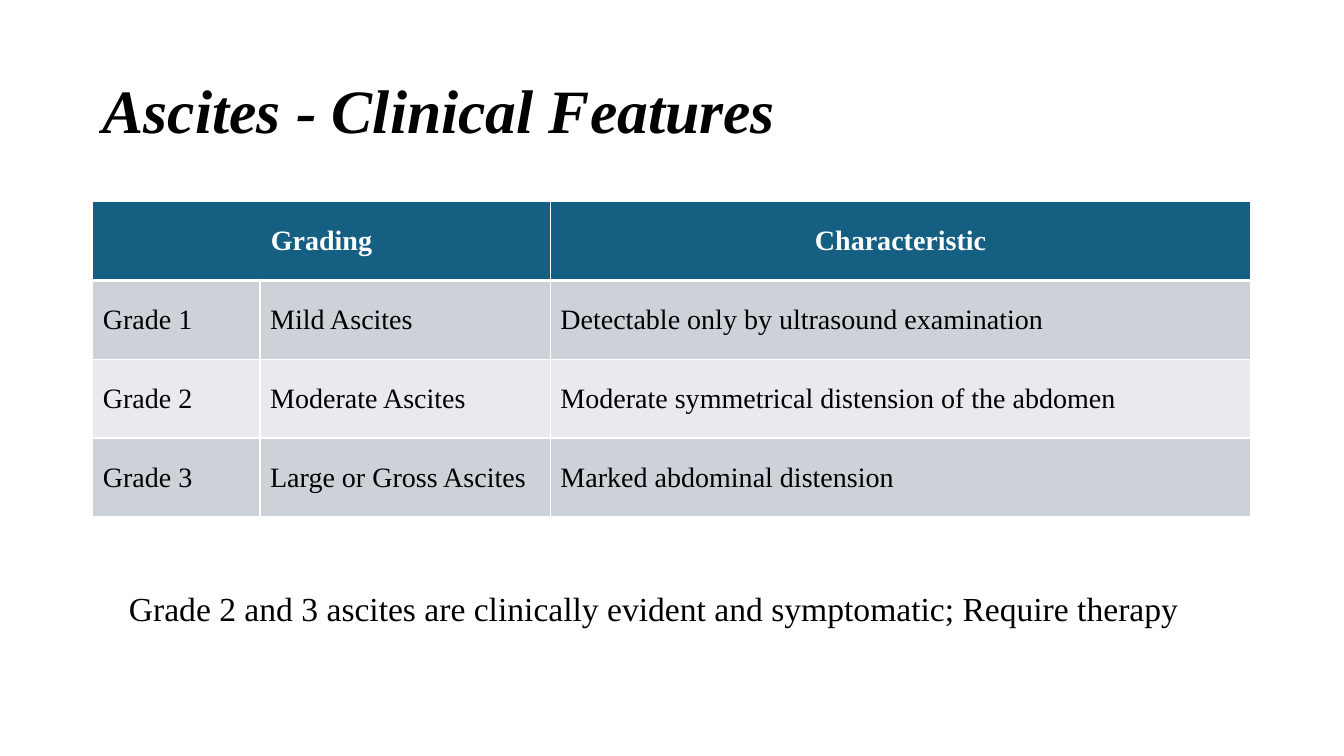
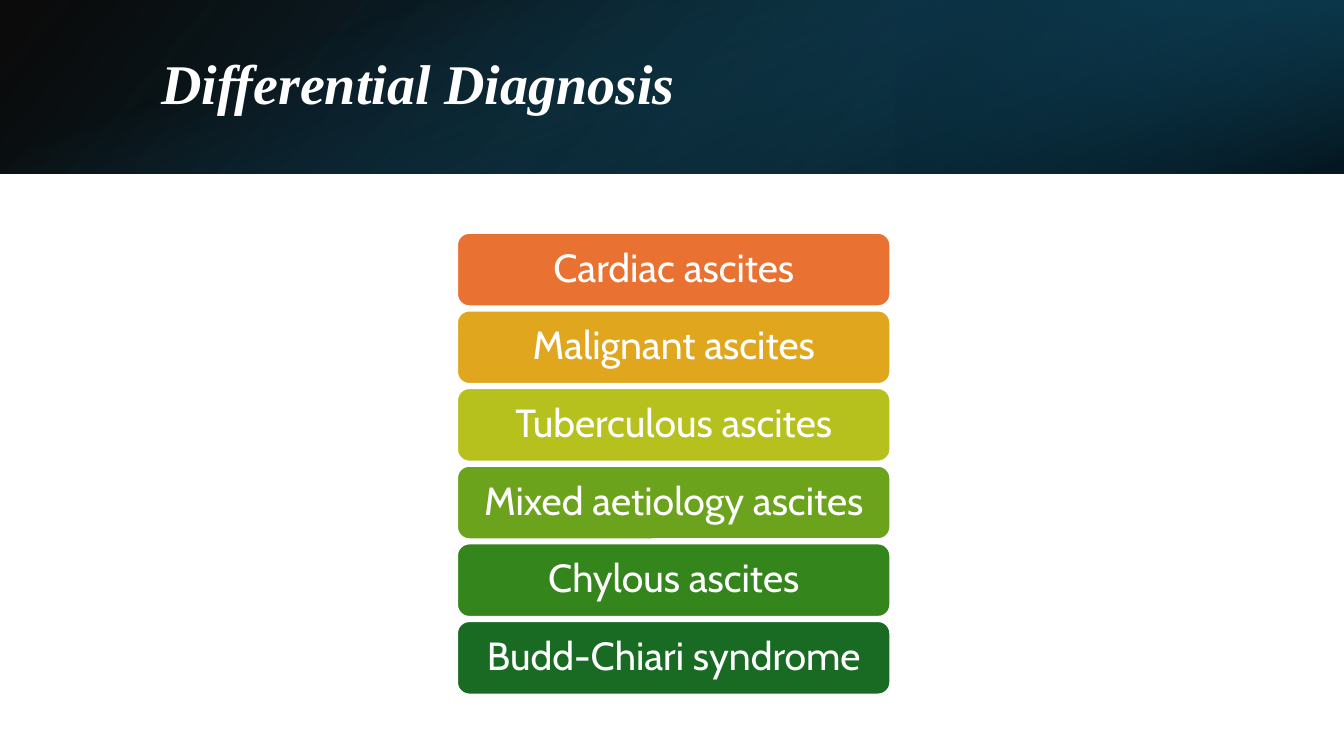
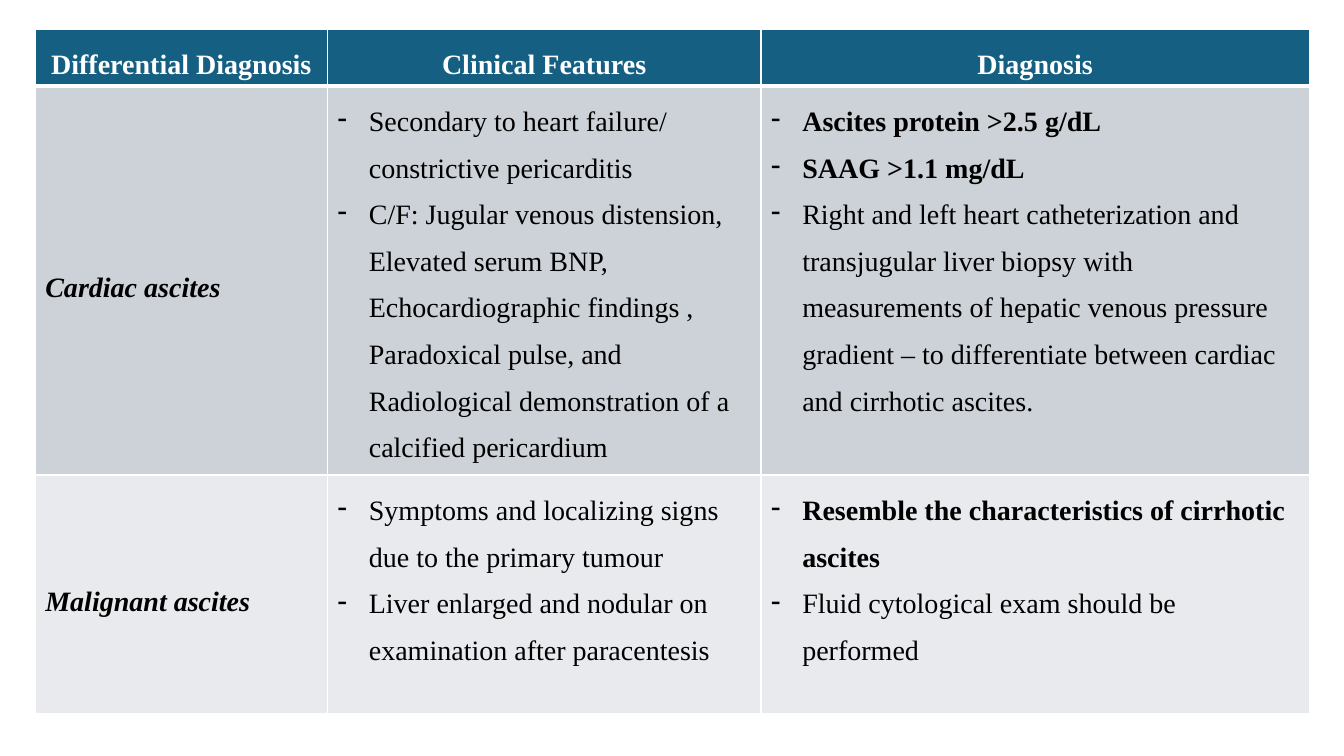
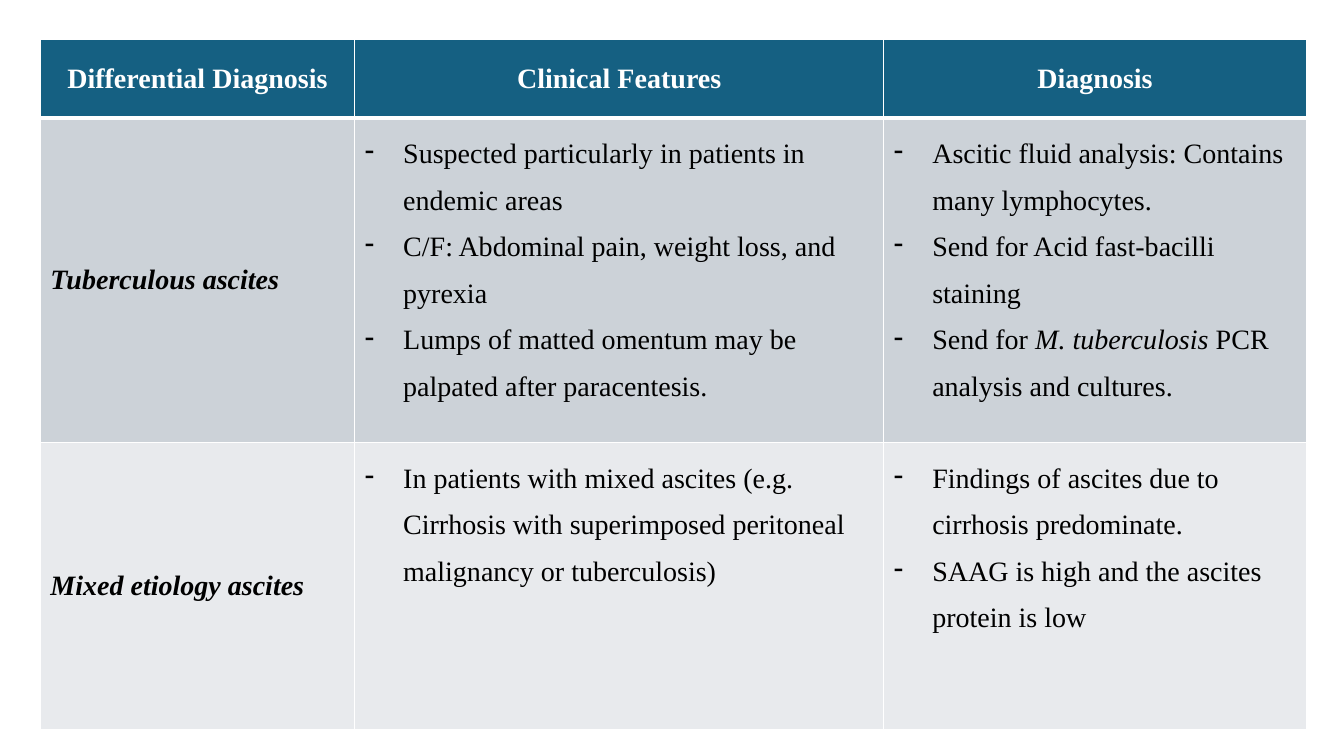
from dataclasses import dataclass
from typing import Optional, Union

from lxml.etree import SubElement
from pptx import Presentation
from pptx.dml.color import RGBColor
from pptx.enum.shapes import MSO_SHAPE
from pptx.enum.text import MSO_ANCHOR, MSO_AUTO_SIZE, PP_ALIGN
from pptx.oxml.ns import qn
from pptx.util import Emu, Inches, Pt


@dataclass(frozen=True)
class Theme:
    serif: str = "Times New Roman"
    sans: str = "Cabin"
    ink: str = "000000"
    paper: str = "FFFFFF"
    header: str = "156082"
    stripes: tuple[str, str] = ("CCD2D8", "E8EAED")
    title_size: int = 44
    band_title_size: int = 40
    label_size: int = 28
    note_size: int = 24
    cell_size: int = 20
    rule: int = 1
    header_rule: int = 3


@dataclass(frozen=True)
class Span:
    text: str
    bold: bool = False
    italic: bool = False


@dataclass(frozen=True)
class Area:
    left: float
    top: float
    width: float
    height: float


@dataclass(frozen=True)
class Stop:
    position: int
    color: str
    opacity: int = 100


@dataclass(frozen=True)
class Layer:
    area: tuple[int, int, int, int]
    angle: int
    stops: tuple[Stop, Stop]
    rotation: int = 0
    flipped: bool = False


Para = Union[str, tuple[Span, ...]]
Content = Union[str, list[Para]]


@dataclass(frozen=True)
class Grid:
    left: float
    top: float
    columns: tuple[float, ...]
    rows: tuple[float, ...]
    header: tuple[Optional[str], ...]
    body: list[tuple[Content, ...]]
    indent: float = 0
    label_spacing: float = 1.0
    header_anchor: MSO_ANCHOR = MSO_ANCHOR.MIDDLE
    strong_labels: bool = True


THEME = Theme()
WIDTH = Inches(13.33)
HEIGHT = Inches(7.5)
TITLE_ONLY = 5
BLANK = 6


def across(percent: float) -> Emu:
    return Emu(round(WIDTH * percent / 100))


def down(percent: float) -> Emu:
    return Emu(round(HEIGHT * percent / 100))


def place(area: Area) -> tuple[Emu, Emu, Emu, Emu]:
    return across(area.left), down(area.top), across(area.width), down(area.height)


def write(frame, paras: list[Para], *, size: int, color: str = THEME.ink,
          font: str = THEME.serif, bold: bool = False, italic: bool = False,
          align: PP_ALIGN = PP_ALIGN.LEFT, spacing: float = 1.0,
          bullet: str = "", indent: float = 0) -> None:
    for index, content in enumerate(paras):
        para = frame.add_paragraph() if index else frame.paragraphs[0]
        if bullet:
            properties = para._p.get_or_add_pPr()
            properties.set("marL", str(Inches(indent)))
            properties.set("indent", str(-Inches(indent)))
            SubElement(properties, qn("a:buChar")).set("char", bullet)
        para.alignment = align
        para.line_spacing = spacing
        spans = (Span(content, bold, italic),) if isinstance(content, str) else content
        for span in spans:
            run = para.add_run()
            run.text = span.text
            run.font.name = font
            run.font.size = Pt(size)
            run.font.bold = span.bold
            run.font.italic = span.italic
            run.font.color.rgb = RGBColor.from_string(color)


def add_title(page, text: str, area: Area, *, size: int, color: str) -> None:
    title = page.shapes.title
    title.left, title.top, title.width, title.height = place(area)
    frame = title.text_frame
    frame.word_wrap = True
    frame.auto_size = MSO_AUTO_SIZE.NONE
    frame.vertical_anchor = MSO_ANCHOR.MIDDLE
    write(frame, [text], size=size, color=color, bold=True, italic=True, spacing=0.9)


def rule_cell(cell, *, top: int, bottom: int) -> None:
    properties = cell._tc.get_or_add_tcPr()
    widths = {"a:lnL": THEME.rule, "a:lnR": THEME.rule, "a:lnT": top, "a:lnB": bottom}
    for side, width in widths.items():
        line = SubElement(properties, qn(side))
        line.set("w", str(Pt(width)))
        fill = SubElement(line, qn("a:solidFill"))
        SubElement(fill, qn("a:srgbClr")).set("val", THEME.paper)


def paint_cell(cell, row: int) -> None:
    rule_cell(cell,
              top=THEME.header_rule if row == 1 else THEME.rule,
              bottom=THEME.rule if row else THEME.header_rule)
    color = THEME.stripes[(row - 1) % 2] if row else THEME.header
    cell.fill.solid()
    cell.fill.fore_color.rgb = RGBColor.from_string(color)


def add_grid(page, grid: Grid) -> None:
    area = Area(grid.left, grid.top, sum(grid.columns), sum(grid.rows))
    table = page.shapes.add_table(len(grid.rows), len(grid.columns), *place(area)).table
    for column, share in zip(table.columns, grid.columns):
        column.width = across(share)
    for row, share in zip(table.rows, grid.rows):
        row.height = down(share)
    for row, contents in enumerate([grid.header, *grid.body]):
        for column, content in enumerate(contents):
            cell = table.cell(row, column)
            paint_cell(cell, row)
            if content is None:
                table.cell(row, column - 1).merge(cell)
            elif row == 0:
                cell.vertical_anchor = grid.header_anchor
                write(cell.text_frame, [content], size=THEME.cell_size, color=THEME.paper,
                      bold=True, align=PP_ALIGN.CENTER, spacing=grid.label_spacing)
            elif isinstance(content, str):
                cell.vertical_anchor = MSO_ANCHOR.MIDDLE
                write(cell.text_frame, [content], size=THEME.cell_size,
                      bold=grid.strong_labels, italic=grid.strong_labels,
                      spacing=grid.label_spacing)
            else:
                cell.vertical_anchor = MSO_ANCHOR.TOP
                write(cell.text_frame, content, size=THEME.cell_size,
                      spacing=1.5, bullet="-", indent=grid.indent)


def add_layer(page, layer: Layer) -> None:
    shape = page.shapes.add_shape(MSO_SHAPE.RECTANGLE, *layer.area)
    shape.shadow.inherit = False
    shape.line.fill.background()
    shape.rotation = layer.rotation
    properties = shape.element.spPr
    if layer.flipped:
        properties.find(qn("a:xfrm")).set("flipH", "1")
    shape.fill.gradient()
    gradient = properties.find(qn("a:gradFill"))
    for child in list(gradient):
        gradient.remove(child)
    stops = SubElement(gradient, qn("a:gsLst"))
    for stop in layer.stops:
        mark = SubElement(stops, qn("a:gs"))
        mark.set("pos", str(stop.position * 1000))
        color = SubElement(mark, qn("a:srgbClr"))
        color.set("val", stop.color)
        SubElement(color, qn("a:alpha")).set("val", str(stop.opacity * 1000))
    direction = SubElement(gradient, qn("a:lin"))
    direction.set("ang", str(layer.angle * 60000))
    direction.set("scaled", "0")


def add_band(page) -> None:
    height = down(22.93)
    third = WIDTH // 3
    offset = (WIDTH - height) // 2
    for layer in (
        Layer((0, 0, WIDTH, height), 140,
              (Stop(0, "000000", 96), Stop(100, "104862")), flipped=True),
        Layer((WIDTH - third, 0, third, height), 320,
              (Stop(19, "0B3041", 68), Stop(100, "156082", 79)), rotation=180, flipped=True),
        Layer((offset, -offset, height, WIDTH), 340,
              (Stop(23, "156082", 0), Stop(99, "000000", 74)), rotation=90),
    ):
        add_layer(page, layer)
    band = page.shapes.title.element
    band.getparent().append(band)


def add_label(page, text: str, area: Area, color: str) -> None:
    box = page.shapes.add_shape(MSO_SHAPE.ROUNDED_RECTANGLE, *place(area))
    box.shadow.inherit = False
    box.fill.solid()
    box.fill.fore_color.rgb = RGBColor.from_string(color)
    box.line.color.rgb = RGBColor.from_string(THEME.paper)
    box.line.width = Pt(1.5)
    frame = box.text_frame
    frame.word_wrap = True
    frame.vertical_anchor = MSO_ANCHOR.MIDDLE
    frame.margin_left = frame.margin_right = Inches(0.12)
    frame.margin_top = frame.margin_bottom = Inches(0.06)
    write(frame, [text], size=THEME.label_size, color=THEME.paper, font=THEME.sans,
          align=PP_ALIGN.CENTER, spacing=0.9)


def add_note(page, text: str, area: Area) -> None:
    box = page.shapes.add_textbox(*place(area))
    box.text_frame.word_wrap = True
    write(box.text_frame, [text], size=THEME.note_size)


GRADES = Grid(
    left=6.9, top=26.67, columns=(12.45, 21.6, 52.13), rows=(10.43,) * 4,
    header=("Grading", None, "Characteristic"),
    body=[
        ("Grade 1", "Mild Ascites", "Detectable only by ultrasound examination"),
        ("Grade 2", "Moderate Ascites", "Moderate symmetrical distension of the abdomen"),
        ("Grade 3", "Large or Gross Ascites", "Marked abdominal distension"),
    ],
    strong_labels=False,
)

DIFFERENTIAL_HEADER = ("Differential Diagnosis", "Clinical Features", "Diagnosis")

CARDIAC_MALIGNANT = Grid(
    left=2.62, top=3.87, columns=(21.75, 32.25, 40.8), rows=(6.93, 51.47, 31.6),
    header=DIFFERENTIAL_HEADER,
    body=[
        ("Cardiac ascites",
         ["Secondary to heart failure/ constrictive pericarditis",
          "C/F: Jugular venous distension, Elevated serum BNP, Echocardiographic findings , "
          "Paradoxical pulse, and Radiological demonstration of a calcified pericardium"],
         [(Span("Ascites protein >2.5 g/dL", bold=True),),
          (Span("SAAG >1.1 mg/dL", bold=True),),
          "Right and left heart catheterization and transjugular liver biopsy with "
          "measurements of hepatic venous pressure gradient – to differentiate between "
          "cardiac and cirrhotic ascites."]),
        ("Malignant ascites",
         ["Symptoms and localizing signs due to the primary tumour",
          "Liver enlarged and nodular on examination after paracentesis"],
         [(Span("Resemble the characteristics of cirrhotic ascites", bold=True),),
          "Fluid cytological exam should be performed"]),
    ],
    indent=0.31, label_spacing=1.5, header_anchor=MSO_ANCHOR.TOP,
)

TUBERCULOUS_MIXED = Grid(
    left=3, top=5.2, columns=(23.4, 39.37, 31.42), rows=(10.4, 42.93, 38),
    header=DIFFERENTIAL_HEADER,
    body=[
        ("Tuberculous ascites",
         ["Suspected particularly in patients in endemic areas",
          "C/F: Abdominal pain, weight loss, and pyrexia",
          "Lumps of matted omentum may be palpated after paracentesis."],
         ["Ascitic fluid analysis: Contains many lymphocytes.",
          "Send for Acid fast-bacilli staining",
          (Span("Send for "), Span("M. tuberculosis ", italic=True),
           Span("PCR analysis and cultures."))]),
        ("Mixed etiology ascites",
         ["In patients with mixed ascites (e.g. Cirrhosis with superimposed peritoneal "
          "malignancy or tuberculosis)"],
         ["Findings of ascites due to cirrhosis predominate.",
          "SAAG is high and the ascites protein is low"]),
    ],
    indent=0.38,
)

DIAGNOSES = (
    ("Cardiac ascites", "E97132"),
    ("Malignant ascites", "E0A61D"),
    ("Tuberculous ascites", "B7C11E"),
    ("Mixed aetiology ascites", "6BA31D"),
    ("Chylous ascites", "34861C"),
    ("Budd-Chiari syndrome", "196B24"),
)


def add_page(deck, layout: int):
    return deck.slides.add_slide(deck.slide_layouts[layout])


def build_grading(deck) -> None:
    page = add_page(deck, TITLE_ONLY)
    add_title(page, "Ascites - Clinical Features", Area(6.9, 5.33, 86.25, 19.33),
              size=THEME.title_size, color=THEME.ink)
    add_grid(page, GRADES)
    add_note(page, "Grade 2 and 3 ascites are clinically evident and symptomatic; Require therapy",
             Area(8.85, 77.07, 89.7, 6.67))


def build_diagnoses(deck) -> None:
    page = add_page(deck, TITLE_ONLY)
    add_band(page)
    add_title(page, "Differential Diagnosis", Area(11.25, 5.07, 82.35, 12.8),
              size=THEME.band_title_size, color=THEME.paper)
    for index, (text, color) in enumerate(DIAGNOSES):
        add_label(page, text, Area(34, 30.8 + index * 10.27, 32.25, 9.73), color)


def main() -> None:
    deck = Presentation()
    deck.slide_width, deck.slide_height = WIDTH, HEIGHT
    build_grading(deck)
    build_diagnoses(deck)
    for grid in (CARDIAC_MALIGNANT, TUBERCULOUS_MIXED):
        add_grid(add_page(deck, BLANK), grid)
    deck.save("out.pptx")


if __name__ == "__main__":
    main()
